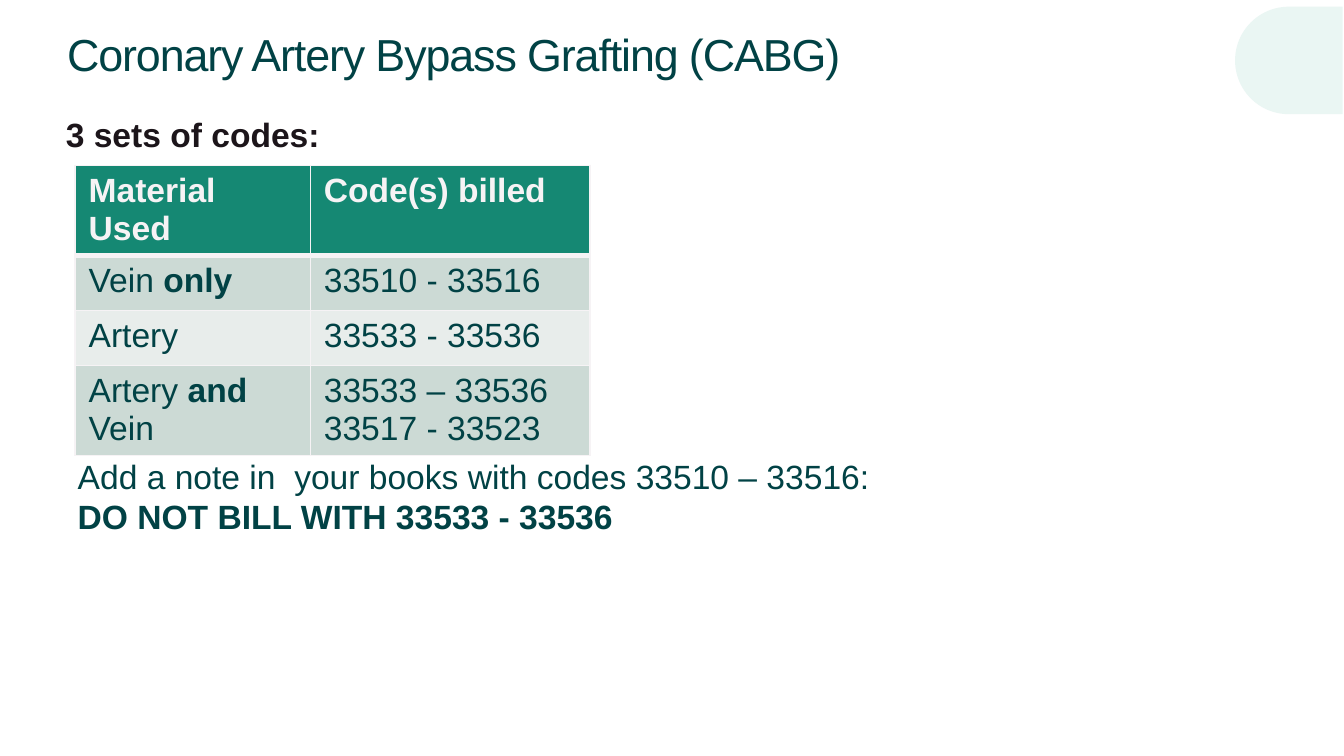
from dataclasses import dataclass

from lxml import etree
from pptx import Presentation
from pptx import util as u
from pptx.dml.color import RGBColor
from pptx.enum import shapes, text
from pptx.oxml import ns


@dataclass(frozen=True)
class Theme:
    font: str = "Arial"
    head: int = 24
    body: int = 18
    ink: str = "014245"
    dark: str = "1C151A"
    pale: str = "F6F3F5"
    mint: str = "EAF6F3"
    green: str = "158873"
    bands: tuple = ("CCDAD5", "E8EDEB")


theme = Theme()


def write(para, words, color=theme.ink, size=theme.body, bold=False):
    run = para.add_run()
    run.text = words
    run.font.name = theme.font
    run.font.size = u.Pt(size)
    run.font.bold = bold
    run.font.color.rgb = RGBColor.from_string(color)
    return run


def add_box(left, top, width, height, inset=0.1):
    box = slide.shapes.add_textbox(*map(u.Inches, (left, top, width, height)))
    frame = box.text_frame
    frame.word_wrap = True
    frame.margin_left = u.Inches(inset)
    frame.margin_right = u.Inches(0.08)
    frame.margin_top = frame.margin_bottom = u.Inches(0.04)
    return frame


deck = Presentation()
deck.slide_width = u.Inches(10)
deck.slide_height = u.Inches(10 * 9 / 16)
slide = deck.slides.add_slide(deck.slide_layouts[6])

tab = slide.shapes.add_shape(
    shapes.MSO_SHAPE.FLOWCHART_DELAY,
    u.Inches(9.19), u.Inches(0.05), u.Inches(0.8), u.Inches(0.8))
tab.shadow.inherit = False
tab.fill.solid()
tab.fill.fore_color.rgb = RGBColor.from_string(theme.mint)
tab.line.fill.background()
tab._element.spPr.find(ns.qn("a:xfrm")).set("flipH", "1")

title = add_box(0.33, 0.11, 8.63, 0.58, 0.17)
title.vertical_anchor = text.MSO_ANCHOR.MIDDLE
run = write(title.paragraphs[0], "Coronary Artery Bypass Grafting (CABG)", size=theme.head)
run.font._element.set("spc", "-60")

intro = add_box(0.33, 0.81, 9.31, 4.5, 0.16)
write(intro.paragraphs[0], "3 sets of codes:", theme.dark, bold=True)

rows = [
    [[("Material Used", True)], [("Code(s) billed", True)]],
    [[("Vein ", False), ("only", True)], [("33510 - 33516", False)]],
    [[("Artery", False)], [("33533 - 33536", False)]],
    [[("Artery ", False), ("and ", True), ("Vein", False)],
     [("33533 – 33536\n33517 - 33523", False)]],
]
frame = slide.shapes.add_table(
    len(rows), 2, u.Inches(0.56), u.Inches(1.23), u.Inches(3.83), u.Inches(1.64))
table = frame.table
for col, width in zip(table.columns, (1.75, 2.08)):
    col.width = u.Inches(width)

for r, row in enumerate(rows):
    table.rows[r].height = u.Inches(0.41)
    for c, parts in enumerate(row):
        cell = table.cell(r, c)
        cell.margin_bottom = u.Inches(0.02)
        para = cell.text_frame.paragraphs[0]
        for words, bold in parts:
            for n, line in enumerate(words.split("\n")):
                if n:
                    para.add_line_break()
                write(para, line, theme.ink if r else theme.pale, bold=bold)
        props = cell._tc.get_or_add_tcPr()
        for side in ("lnL", "lnR", "lnT", "lnB"):
            thick = (r, side) in ((0, "lnB"), (1, "lnT"))
            edge = etree.SubElement(
                props, ns.qn("a:" + side), w=str(u.Pt(3 if thick else 1)))
            fill = etree.SubElement(edge, ns.qn("a:solidFill"))
            etree.SubElement(fill, ns.qn("a:srgbClr"), val=theme.pale)
        cell.fill.solid()
        shade = theme.bands[(r - 1) % 2] if r else theme.green
        cell.fill.fore_color.rgb = RGBColor.from_string(shade)

note = add_box(0.48, 3.34, 6.69, 0.71)
note.margin_top = note.margin_bottom = u.Inches(0.05)
write(note.paragraphs[0], "Add a note in  your books with codes 33510 – 33516:")
write(note.add_paragraph(), "DO NOT BILL WITH 33533 - 33536", bold=True)

deck.save("out.pptx")
